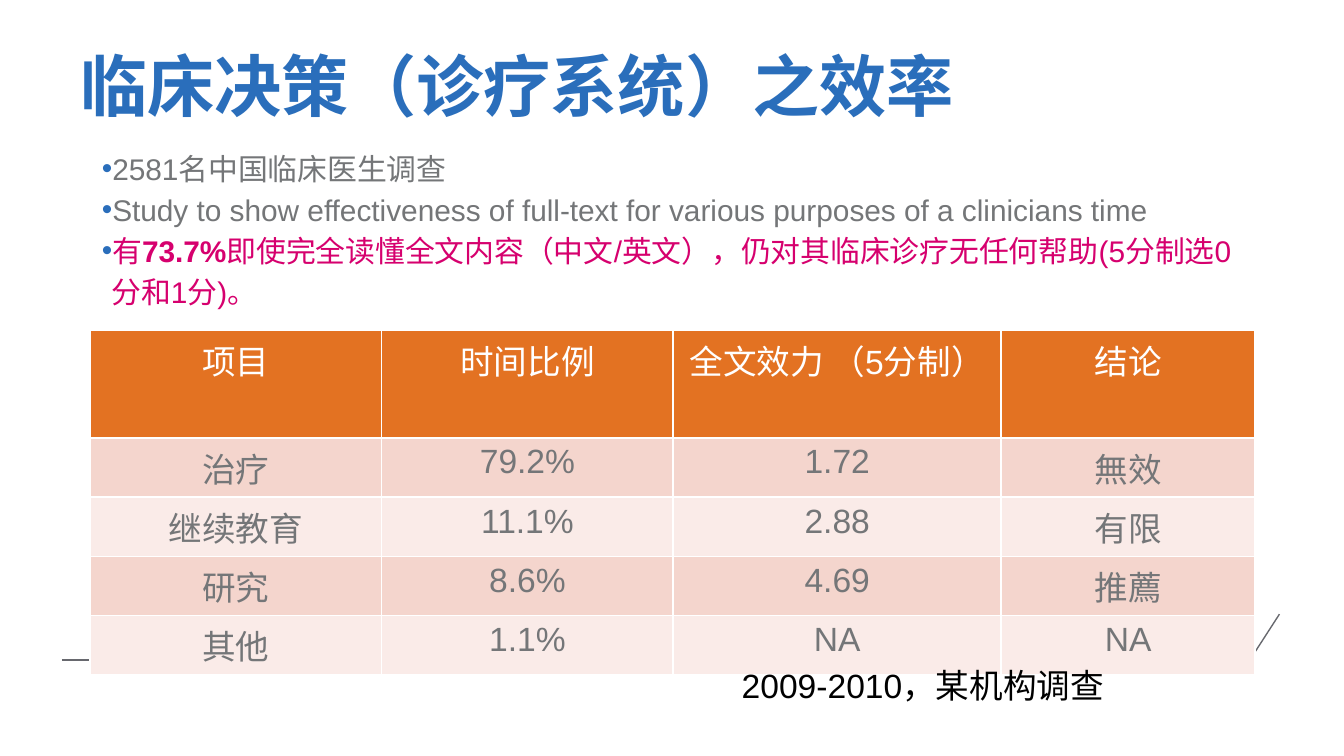
from typing import NamedTuple

from lxml import etree
from pptx import Presentation
from pptx.dml.color import RGBColor
from pptx.enum import shapes, text
from pptx.oxml.ns import qn
from pptx.util import Inches, Pt

BLUE, GREY, PINK, ORANGE, WHITE = "2A6EBB", "747678", "D6006E", "E37222", "FFFFFF"
BANDS = ("F4D5CD", "FAEBE8")
LATIN, CJK = "Arial", "Noto Sans CJK TC"


class Run(NamedTuple):
    text: str
    color: str
    size: int
    bold: bool = False
    font: str = LATIN


class Line(NamedTuple):
    x1: float
    y1: float
    x2: float
    y2: float


def rgb(color: str) -> RGBColor:
    return RGBColor.from_string(color)


def add_run(p, run: Run) -> None:
    r = p.add_run()
    r.text = run.text
    for name, value in {"name": run.font, "size": Pt(run.size), "bold": run.bold}.items():
        setattr(r.font, name, value)
    r.font.color.rgb = rgb(run.color)
    if run.font == CJK:
        etree.SubElement(r._r.rPr, qn("a:ea"), typeface=CJK)


def add_text(s, box: tuple, paragraphs: list[list[Run]], inset: float = 0.1,
             spacing: float = 1.0, bullet: bool = False) -> None:
    tf = s.shapes.add_textbox(*map(Inches, box)).text_frame
    settings = {"word_wrap": True, "vertical_anchor": text.MSO_ANCHOR.TOP,
                "margin_top": Inches(inset), "margin_bottom": Inches(inset)}
    for name, value in settings.items():
        setattr(tf, name, value)
    for i, runs in enumerate(paragraphs):
        p = tf.add_paragraph() if i else tf.paragraphs[0]
        p.line_spacing = spacing
        if bullet:
            add_bullet(p)
        for run in runs:
            add_run(p, run)


def add_bullet(p) -> None:
    pPr = p._p.get_or_add_pPr()
    pPr.set("marL", str(Inches(0.15)))
    pPr.set("indent", str(Inches(-0.07)))
    color = etree.SubElement(pPr, qn("a:buClr"))
    etree.SubElement(color, qn("a:srgbClr"), val=BLUE)
    etree.SubElement(pPr, qn("a:buFont"), typeface=LATIN)
    etree.SubElement(pPr, qn("a:buChar"), char="•")


def add_line(s, line: Line) -> None:
    c = s.shapes.add_connector(shapes.MSO_CONNECTOR.STRAIGHT, *map(Inches, line))
    c.line.color.rgb = rgb("67686E")
    c.line.width = Pt(0.75)
    etree.SubElement(c._element.spPr, qn("a:effectLst"))


def set_borders(cell) -> None:
    """Draw white borders; they must precede the fill in the cell's XML."""
    tcPr = cell._tc.get_or_add_tcPr()
    for i, side in enumerate("LRTB"):
        ln = etree.Element(qn(f"a:ln{side}"), w=str(Pt(1)))
        fill = etree.SubElement(ln, qn("a:solidFill"))
        etree.SubElement(fill, qn("a:srgbClr"), val=WHITE)
        tcPr.insert(i, ln)


def add_survey_table(s, rows: list[tuple], widths: list[float], heights: list[float]) -> None:
    frame = s.shapes.add_table(len(rows), len(widths), Inches(0.67), Inches(2.46),
                               Inches(sum(widths)), Inches(sum(heights)))
    table = frame.table
    for column, width in zip(table.columns, widths):
        column.width = Inches(width)
    for i, (row, height) in enumerate(zip(rows, heights)):
        table.rows[i].height = Inches(height)
        for j, value in enumerate(row):
            cell = table.cell(i, j)
            cell.margin_top = cell.margin_bottom = Inches(0.04)
            cell.fill.solid()
            cell.fill.fore_color.rgb = rgb(BANDS[(i - 1) % 2] if i else ORANGE)
            set_borders(cell)
            p = cell.text_frame.paragraphs[0]
            p.alignment = text.PP_ALIGN.CENTER
            font = CJK if i and not value.isascii() else LATIN
            add_run(p, Run(value, GREY if i else WHITE, 18, font=font))


def main() -> None:
    prs = Presentation()
    prs.slide_width = Inches(10)
    prs.slide_height = prs.slide_width * 9 // 16
    s = prs.slides.add_slide(prs.slide_layouts[6])

    for line in (Line(0.46, 4.91, 9.29, 4.91), Line(9.3, 4.91, 9.52, 4.57)):
        add_line(s, line)

    add_text(s, (0.58, 0.98, 8.75, 1.42), [
        [Run("2581名中国临床医生调查", GREY, 16)],
        [Run("Study to show effectiveness of full-text for various purposes "
             "of a clinicians time", GREY, 16)],
        [Run("有", PINK, 16), Run("73.7%", PINK, 16, bold=True),
         Run("即使完全读懂全文内容（中文/英文），仍对其临床诊疗无任何帮助"
             "(5分制选0分和1分)。", PINK, 16)],
    ], spacing=1.15, bullet=True)
    add_text(s, (0.5, 0.23, 9.06, 0.73),
             [[Run("临床决策（诊疗系统）之效率", BLUE, 36, bold=True)]])

    add_survey_table(s, [
        ("项目", "时间比例", "全文效力 （5分制）", "结论"),
        ("治疗", "79.2%", "1.72", "無效"),
        ("继续教育", "11.1%", "2.88", "有限"),
        ("研究", "8.6%", "4.69", "推薦"),
        ("其他", "1.1%", "NA", "NA"),
    ], widths=[2.17, 2.17, 2.44, 1.89], heights=[0.8] + [0.44] * 4)

    add_text(s, (5.42, 4.9, 2.92, 0.4),
             [[Run("2009-2010，某机构调查", "000000", 18)]], inset=0.05)
    prs.save("out.pptx")


if __name__ == "__main__":
    main()
